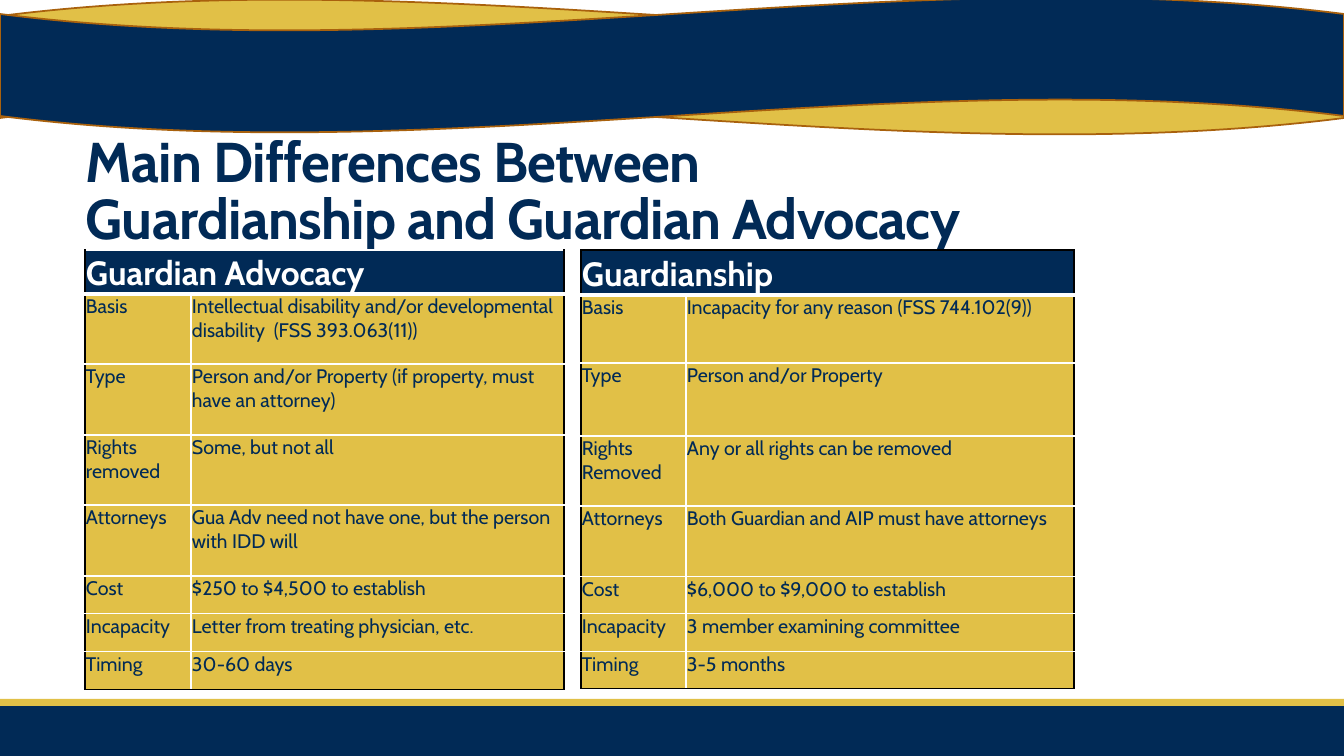
from collections import namedtuple
from dataclasses import dataclass

from lxml.etree import SubElement
from pptx import Presentation
from pptx.dml.color import RGBColor
from pptx.enum.shapes import MSO_SHAPE as Shape
from pptx.enum.text import MSO_ANCHOR as Anchor
from pptx.oxml.ns import qn
from pptx.util import Emu, Pt

EMU_PER_PX = 914400 / 100.8
Box = namedtuple("Box", "left top width height")


@dataclass(frozen=True)
class Theme:
    navy: str = "012A56"
    gold: str = "E1C047"
    rust: str = "A9610D"
    white: str = "FFFFFF"
    black: str = "000000"
    font: str = "Cabin"
    title_size: int = 40
    header_size: int = 24
    body_size: int = 14


THEME = Theme()
PAGE = Box(0, 0, 1344, 756)
TITLE_LINES = ["Main Differences Between ", "Guardianship and Guardian Advocacy"]

ADVOCACY = [
    ("Basis", "Intellectual disability and/or developmental disability  (FSS 393.063(11))"),
    ("Type", "Person and/or Property (if property, must have an attorney)"),
    ("Rights removed", "Some, but not all"),
    ("Attorneys", "Gua Adv need not have one, but the person with IDD will"),
    ("Cost", "$250 to $4,500 to establish"),
    ("Incapacity", "Letter from treating physician, etc."),
    ("Timing", "30-60 days"),
]
GUARDIANSHIP = [
    ("Basis", "Incapacity for any reason (FSS 744.102(9))"),
    ("Type", "Person and/or Property"),
    ("Rights Removed", "Any or all rights can be removed"),
    ("Attorneys", "Both Guardian and AIP must have attorneys"),
    ("Cost", "$6,000 to $9,000 to establish"),
    ("Incapacity", "3 member examining committee"),
    ("Timing", "3-5 months"),
]


def px(length):
    return Emu(round(length * EMU_PER_PX))


def place(box):
    return [px(length) for length in box]


def add_run(para, text, size, color, bold=False):
    run = para.add_run()
    run.text = text
    run.font.name = THEME.font
    run.font.size = Pt(size)
    run.font.bold = bold
    run.font.color.rgb = RGBColor.from_string(color)
    return run


def add_band(page, kind, box, fill, line=None):
    band = page.shapes.add_shape(kind, *place(box))
    band.shadow.inherit = False
    band.fill.solid()
    band.fill.fore_color.rgb = RGBColor.from_string(fill)
    if line:
        band.line.color.rgb = RGBColor.from_string(line)
        band.line.width = Pt(1.25)
    else:
        band.line.fill.background()
    return band


def add_footer(page, box):
    stripe = 7
    add_band(page, Shape.RECTANGLE, box, THEME.navy)
    add_band(page, Shape.RECTANGLE,
             Box(box.left, box.top - stripe, box.width, stripe), THEME.gold)


def add_waves(page, box):
    """Lay a mirrored navy wave over a gold one."""
    add_band(page, Shape.WAVE, box, THEME.gold, THEME.rust)
    front = add_band(page, Shape.WAVE, box._replace(top=box.top - 2), THEME.navy, THEME.rust)
    front._element.spPr.get_or_add_xfrm().set("flipH", "1")


def add_title(page, box):
    frame = page.shapes.add_textbox(*place(box)).text_frame
    frame.word_wrap = True
    frame.vertical_anchor = Anchor.BOTTOM
    para = frame.paragraphs[0]
    para.line_spacing = 0.85
    for index, line in enumerate(TITLE_LINES):
        if index:
            para.add_line_break()
        run = add_run(para, line, THEME.title_size, THEME.navy, True)
        run.font._element.set("spc", "-50")


def set_borders(cell, **edges):
    """Draw the L, R, T and B edges, each given as (colour, points)."""
    properties = cell._tc.get_or_add_tcPr()
    for side in "LRTB":
        color, points = edges.get(side, (THEME.white, 1))
        line = SubElement(properties, qn(f"a:ln{side}"), w=str(Pt(points)))
        SubElement(SubElement(line, qn("a:solidFill")), qn("a:srgbClr"), val=color)


def style_cell(cell, fill, edges):
    set_borders(cell, **edges)
    cell.fill.solid()
    cell.fill.fore_color.rgb = RGBColor.from_string(fill)
    cell.margin_left = cell.margin_right = cell.margin_top = px(1)
    cell.margin_bottom = 0


def add_comparison(page, box, heading, rows, label_width, row_heights, top_color):
    table = page.shapes.add_table(len(rows) + 1, 2, *place(box)).table
    table.first_row = table.horz_banding = False
    for column, width in zip(table.columns, (label_width, box.width - label_width)):
        column.width = px(width)
    for row, height in zip(table.rows, row_heights):
        row.height = px(height)

    outer = (THEME.black, 1)
    header = table.cell(0, 0)
    header.merge(table.cell(0, 1))
    header_edges = {"L": outer, "R": outer, "T": (top_color, 1), "B": (THEME.white, 3)}
    for column in range(2):
        style_cell(table.cell(0, column), THEME.navy, header_edges)
    header.vertical_anchor = Anchor.BOTTOM
    add_run(header.text_frame.paragraphs[0], heading, THEME.header_size, THEME.white, True)

    for row_index, texts in enumerate(rows, 1):
        for column, (text, side) in enumerate(zip(texts, "LR")):
            cell = table.cell(row_index, column)
            edges = {side: outer}
            if row_index == len(rows):
                edges["B"] = outer
            style_cell(cell, THEME.gold, edges)
            add_run(cell.text_frame.paragraphs[0], text, THEME.body_size, THEME.navy)


def main():
    deck = Presentation()
    deck.slide_width, deck.slide_height = px(PAGE.width), px(PAGE.height)
    page = deck.slides.add_slide(deck.slide_layouts[6])
    add_footer(page, Box(0, 706, PAGE.width, 50))
    add_waves(page, Box(0, -1, PAGE.width, 136))
    add_title(page, Box(76, 180, 1109, 76))
    add_comparison(page, Box(85, 250, 479, 440), "Guardian Advocacy", ADVOCACY,
                   106, [44, 70, 71, 70, 71, 38, 38, 38], THEME.white)
    add_comparison(page, Box(581, 250, 493, 439), "Guardianship", GUARDIANSHIP,
                   105, [45, 68, 73, 70, 71, 37, 38, 37], THEME.black)
    deck.save("out.pptx")


if __name__ == "__main__":
    main()
